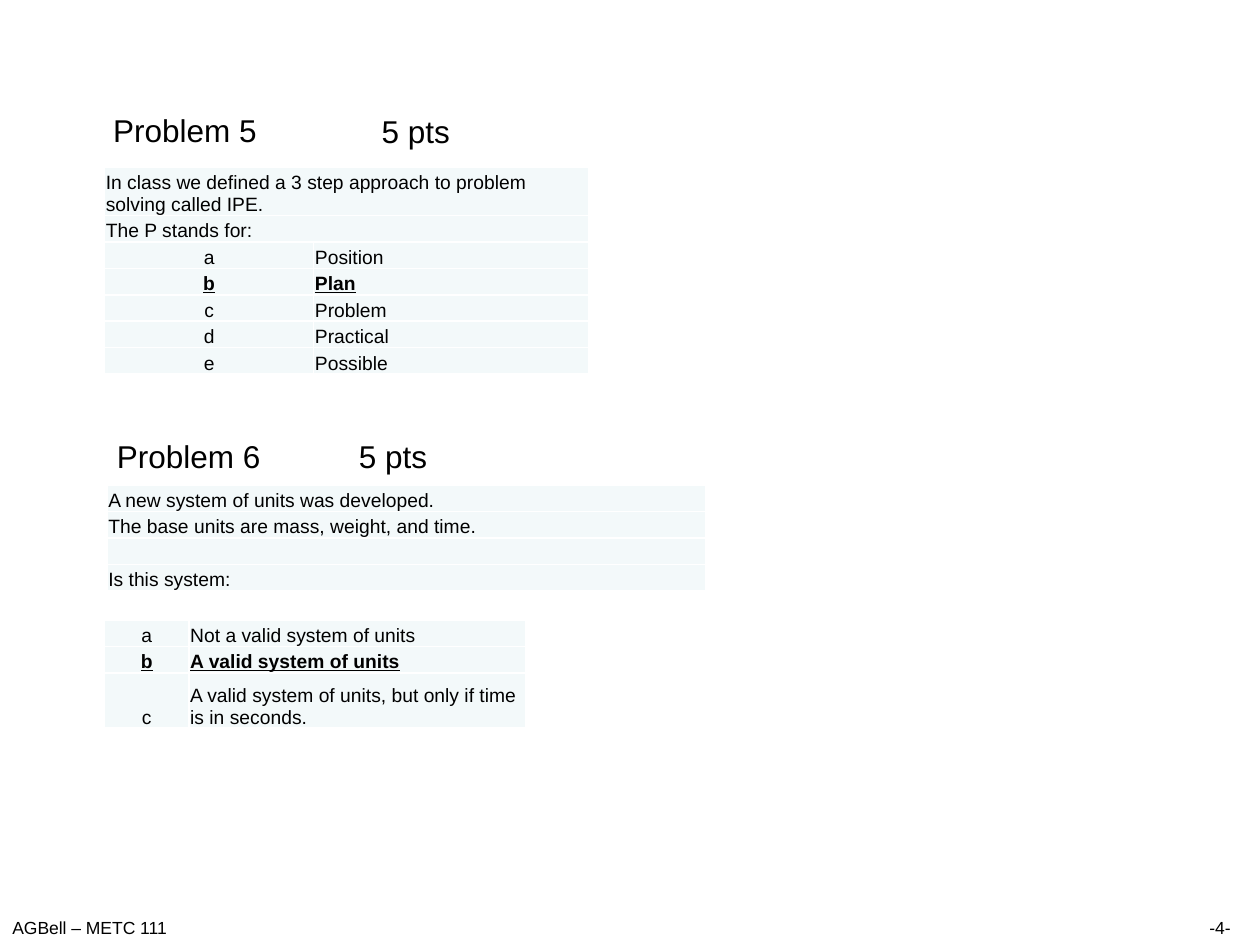
from lxml.etree import SubElement
from pptx import Presentation
from pptx.dml.color import RGBColor
from pptx.enum.text import MSO_ANCHOR, MSO_AUTO_SIZE, PP_ALIGN
from pptx.oxml.ns import qn
from pptx.util import Inches, Pt

BLACK = RGBColor(0x00, 0x00, 0x00)
WHITE = RGBColor(0xFF, 0xFF, 0xFF)
PALE = RGBColor(0xF3, 0xF9, 0xFA)
FONT = "Arial"
ROW = 0.21


def write(tf, text, size=11, strong=False, align=PP_ALIGN.LEFT):
    """Write one paragraph; strong text is bold and underlined."""
    p = tf.paragraphs[0]
    p.alignment = align
    if not text:
        SubElement(p._p, qn("a:endParaRPr"), sz=str(size * 100))
        return
    r = p.add_run()
    r.text = text
    r.font.name = FONT
    r.font.size = Pt(size)
    r.font.color.rgb = BLACK
    r.font.bold = r.font.underline = strong


def add_text(s, text, x, y, w, h, size=18, wrap=True):
    tf = s.shapes.add_textbox(Inches(x), Inches(y), Inches(w), Inches(h)).text_frame
    tf.word_wrap = wrap
    tf.auto_size = MSO_AUTO_SIZE.SHAPE_TO_FIT_TEXT
    write(tf, text, size=size)


def add_borders(cell):
    tcPr = cell._tc.get_or_add_tcPr()
    for side in ("lnL", "lnR", "lnT", "lnB"):
        ln = SubElement(tcPr, qn(f"a:{side}"), w=str(Pt(1)))
        fill = SubElement(ln, qn("a:solidFill"))
        SubElement(fill, qn("a:srgbClr"), val=str(WHITE))


def style_cell(cell):
    cell.margin_left = cell.margin_right = cell.margin_top = Inches(0.01)
    cell.margin_bottom = 0
    cell.vertical_anchor = MSO_ANCHOR.BOTTOM
    add_borders(cell)
    cell.fill.solid()
    cell.fill.fore_color.rgb = PALE


def add_grid(s, x, y, widths, heights, rows, answer=None):
    """Rows are tuples of texts; a one-text row spans all columns."""
    table = s.shapes.add_table(len(rows), len(widths), Inches(x), Inches(y),
                               Inches(sum(widths)), Inches(sum(heights))).table
    table.first_row = table.horz_banding = False
    for column, w in zip(table.columns, widths):
        column.width = Inches(w)
    for i, (texts, h) in enumerate(zip(rows, heights)):
        table.rows[i].height = Inches(h)
        for j in range(len(widths)):
            cell = table.cell(i, j)
            style_cell(cell)
            is_letter = j == 0 and len(texts) > 1
            write(cell.text_frame, texts[j] if j < len(texts) else "",
                  strong=texts[0] == answer,
                  align=PP_ALIGN.CENTER if is_letter else PP_ALIGN.LEFT)
        if len(texts) < len(widths):
            table.cell(i, 0).merge(table.cell(i, len(widths) - 1))


def main():
    prs = Presentation()
    prs.slide_width, prs.slide_height = Inches(10), Inches(7.5)
    s = prs.slides.add_slide(prs.slide_layouts[6])

    add_text(s, "AGBell – METC 111", 0, 7.23, 1.46, 0.27, size=10, wrap=False)
    add_text(s, "-4-", 9.5, 7.23, 0.47, 0.27, size=10, wrap=False)

    add_text(s, "Problem 5", 0.8, 0.83, 4.25, 0.4)
    add_text(s, "5 pts", 2.93, 0.84, 1.09, 0.4)
    add_grid(s, 0.83, 1.33, [1.66, 2.18], [0.38] + [ROW] * 6, [
        ("In class we defined a 3 step approach to problem solving called IPE.",),
        ("The P stands for:",),
        ("a", "Position"),
        ("b", "Plan"),
        ("c", "Problem"),
        ("d", "Practical"),
        ("e", "Possible"),
    ], answer="b")

    add_text(s, "Problem 6", 0.83, 3.42, 2.92, 0.4)
    add_text(s, "5 pts", 2.75, 3.42, 1.09, 0.4)
    add_grid(s, 0.85, 3.85, [4.75], [ROW] * 4, [
        ("A new system of units was developed.",),
        ("The base units are mass, weight, and time.",),
        ("",),
        ("Is this system:",),
    ])
    add_grid(s, 0.83, 4.92, [0.67, 2.67], [ROW, ROW, 0.44], [
        ("a", "Not a valid system of units"),
        ("b", "A valid system of units"),
        ("c", "A valid system of units, but only if time is in seconds."),
    ], answer="b")

    prs.save("out.pptx")


if __name__ == "__main__":
    main()
